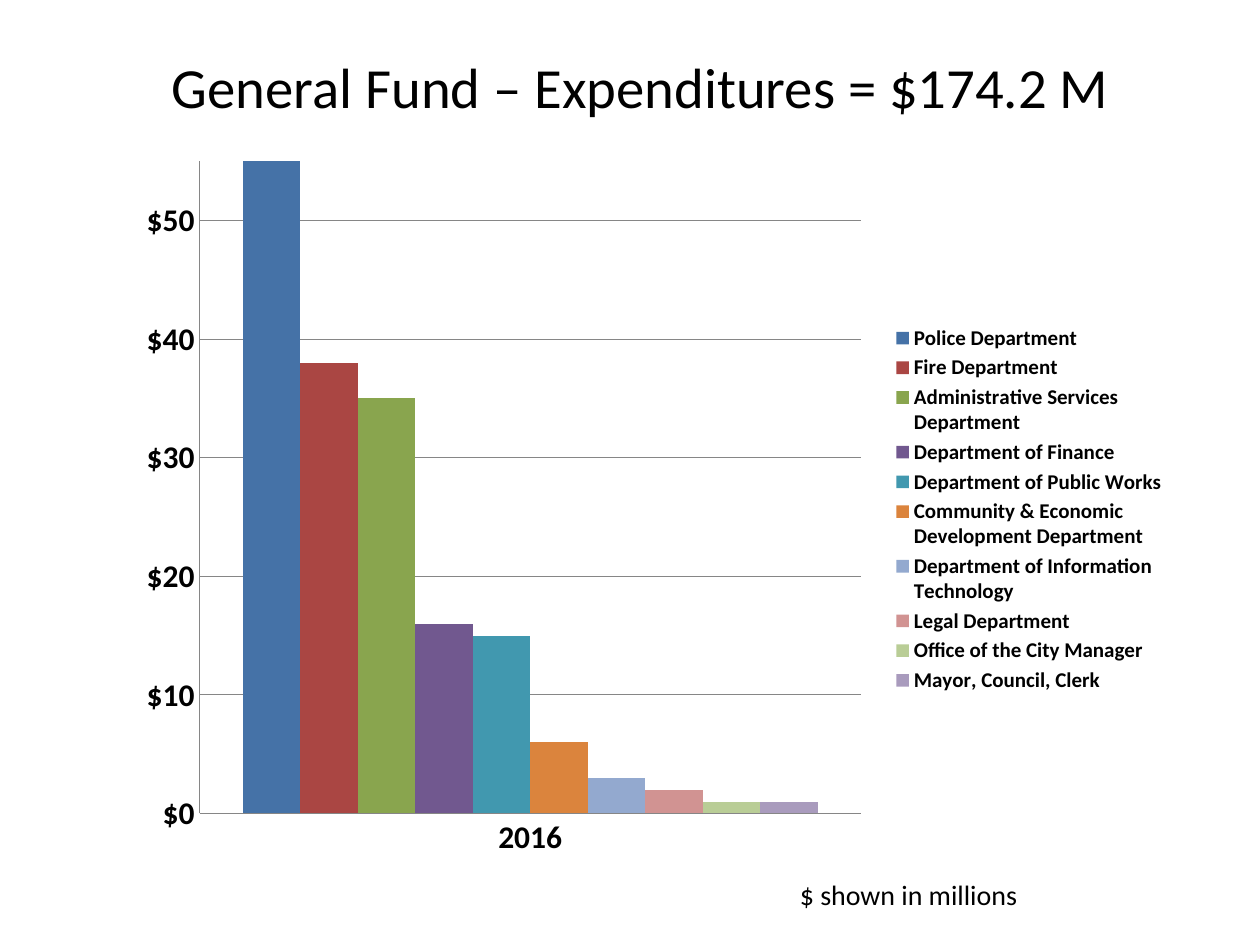
from dataclasses import dataclass
from typing import NamedTuple

from lxml.etree import SubElement
from pptx import Presentation
from pptx.chart.data import CategoryChartData as Data
from pptx.dml.color import RGBColor as Rgb
from pptx.enum.chart import XL_CHART_TYPE as Kind
from pptx.enum.chart import XL_LEGEND_POSITION as Side
from pptx.enum.chart import XL_TICK_MARK as Tick
from pptx.enum.text import MSO_ANCHOR as Anchor
from pptx.enum.text import PP_ALIGN as Align
from pptx.oxml.ns import qn
from pptx.util import Pt


@dataclass(frozen=True)
class Theme:
    font: str = "Calibri"
    ink: str = "000000"
    line: str = "868686"
    title: float = 32.4
    axis: float = 18
    note: float = 16
    key: float = 12


class Box(NamedTuple):
    left: float
    top: float
    width: float
    height: float


class Label(NamedTuple):
    text: str
    box: Box
    size: float
    align: Align
    anchor: Anchor


class Dept(NamedTuple):
    name: str
    cost: int
    color: str


THEME = Theme()
CHART = Box(72, 84, 600, 414)
# Shares of the chart's width and height
PLOT = Box(0.07, 0.02, 0.63, 0.9)
KEY = Box(0.72, 0.24, 0.28, 0.52)

LABELS = [
    Label("General Fund – Expenditures = $174.2 M", Box(66, 24, 600, 50),
          THEME.title, Align.CENTER, Anchor.MIDDLE),
    Label("$ shown in millions", Box(450, 498, 186, 27),
          THEME.note, Align.LEFT, Anchor.TOP),
]
DEPTS = [
    Dept("Police Department", 55, "4572A7"),
    Dept("Fire Department", 38, "AA4643"),
    Dept("Administrative Services Department", 35, "89A54E"),
    Dept("Department of Finance", 16, "71588F"),
    Dept("Department of Public Works", 15, "4198AF"),
    Dept("Community & Economic Development Department", 6, "DB843D"),
    Dept("Department of Information Technology", 3, "93A9CF"),
    Dept("Legal Department", 2, "D19392"),
    Dept("Office of the City Manager", 1, "B9CD96"),
    Dept("Mayor, Council, Clerk", 1, "A99BBD"),
]


def style(font, size: float, bold: bool = False) -> None:
    font.name = THEME.font
    font.size = Pt(size)
    font.bold = bold
    font.color.rgb = Rgb.from_string(THEME.ink)


def rule(line) -> None:
    line.width = Pt(0.75)
    line.color.rgb = Rgb.from_string(THEME.line)


def place(part, box: Box, index: int, inner: bool = False) -> None:
    """Fix a chart part at shares of the chart's size."""
    for old in part.findall(qn("c:layout")):
        part.remove(old)
    layout = SubElement(part, qn("c:layout"))
    part.insert(index, layout)
    manual = SubElement(layout, qn("c:manualLayout"))
    items = [("layoutTarget", "inner")] if inner else []
    items += [("xMode", "edge"), ("yMode", "edge")]
    items += zip("xywh", map(str, box))
    for tag, val in items:
        SubElement(manual, qn(f"c:{tag}")).set("val", val)


def add_label(slide, label: Label) -> None:
    frame = slide.shapes.add_textbox(*map(Pt, label.box)).text_frame
    frame.word_wrap = True
    frame.vertical_anchor = label.anchor
    para = frame.paragraphs[0]
    para.alignment = label.align
    run = para.add_run()
    run.text = label.text
    style(run.font, label.size)


def add_bars(slide, depts: list[Dept]) -> None:
    data = Data(number_format='"$"#,##0')
    data.categories = ["2016"]
    for dept in depts:
        data.add_series(dept.name, [dept.cost])
    chart = slide.shapes.add_chart(
        Kind.COLUMN_CLUSTERED, *map(Pt, CHART), data).chart
    chart.has_title = False
    style(chart.font, THEME.axis)

    plot = chart.plots[0]
    plot.vary_by_categories = False
    plot.gap_width = 150
    plot.overlap = 0
    for bar, dept in zip(plot.series, depts):
        bar.format.fill.solid()
        bar.format.fill.fore_color.rgb = Rgb.from_string(dept.color)

    for axis in (chart.category_axis, chart.value_axis):
        axis.major_tick_mark = axis.minor_tick_mark = Tick.NONE
        style(axis.tick_labels.font, THEME.axis, True)
        rule(axis.format.line)
    scale = chart.value_axis
    scale.minimum_scale, scale.maximum_scale = 0, 55
    scale.major_unit = 10
    scale.tick_labels.number_format = '"$"#,##0'
    scale.tick_labels.number_format_is_linked = False
    scale.has_major_gridlines = True
    rule(scale.major_gridlines.format.line)

    chart.has_legend = True
    key = chart.legend
    key.position = Side.RIGHT
    key.include_in_layout = False
    style(key.font, THEME.key, True)

    area = chart.element.find(".//" + qn("c:plotArea"))
    place(area, PLOT, 0, inner=True)
    place(chart.element.find(".//" + qn("c:legend")), KEY, 1)


def main() -> None:
    deck = Presentation()
    deck.slide_width, deck.slide_height = Pt(720), Pt(540)
    slide = deck.slides.add_slide(deck.slide_layouts[6])
    add_bars(slide, DEPTS)
    for label in LABELS:
        add_label(slide, label)
    deck.save("out.pptx")


if __name__ == "__main__":
    main()
